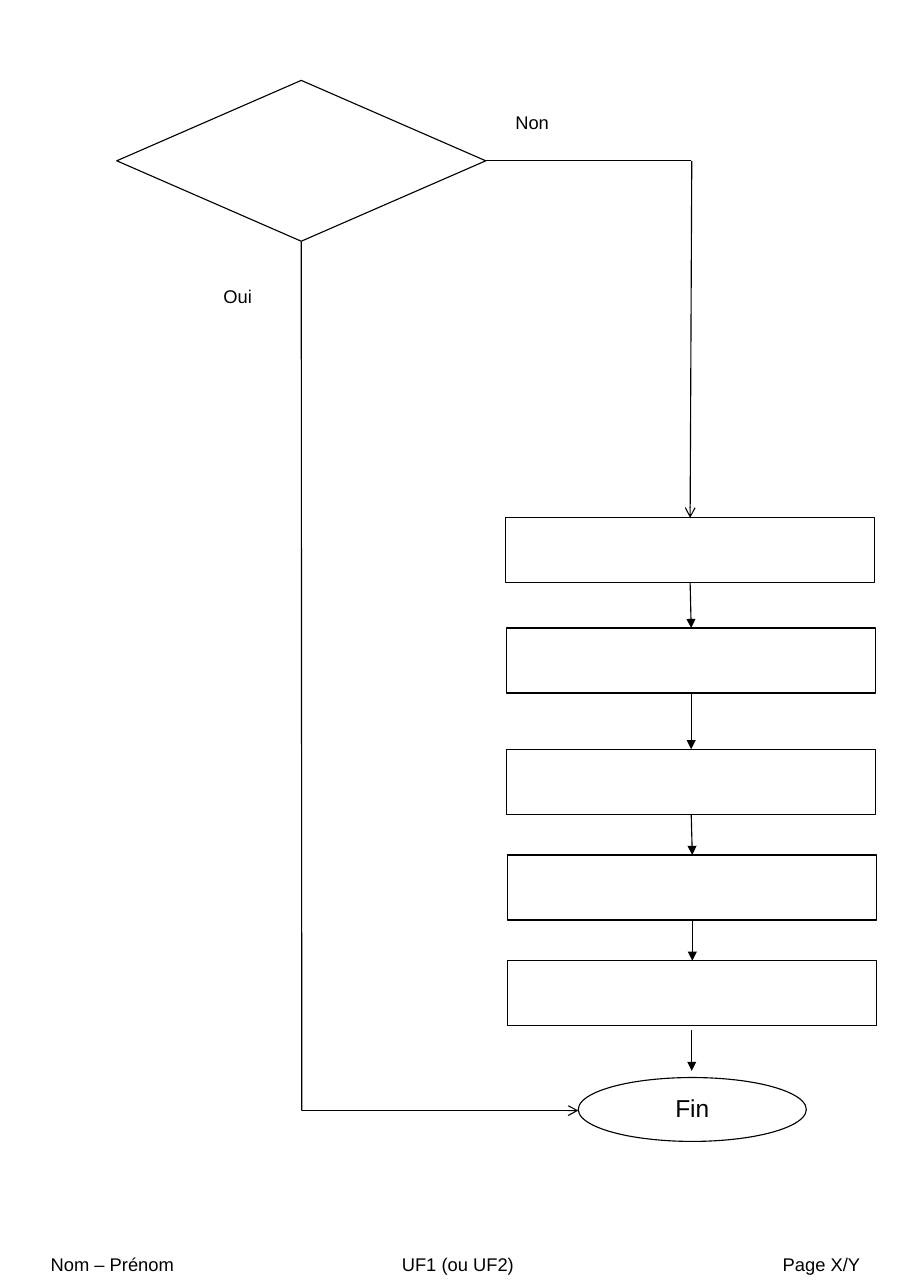
from lxml import etree
from pptx import Presentation
from pptx import util as u
from pptx.dml.color import RGBColor
from pptx.enum import shapes, text
from pptx.oxml.ns import qn

COLORS = {"ink": "000000", "paper": "FFFFFF"}
KIND = shapes.MSO_SHAPE


class Flowchart:
    """Style and current slide, with a method for each kind of element."""
    font = "Arial"
    line_width = 0.75

    def __init__(self, s):
        self.s = s

    def color(self, name):
        return RGBColor.from_string(COLORS[name])

    def outline(self, line):
        line.color.rgb = self.color("ink")
        line.width = u.Pt(self.line_width)

    def put_text(self, sp, words, size, inset=(0.1, 0.05), **fmt):
        tf = sp.text_frame
        x, y = (u.Inches(v) for v in inset)
        frame = {"word_wrap": True, "margin_left": x, "margin_right": x,
                 "margin_top": y, "margin_bottom": y,
                 "vertical_anchor": fmt.pop("anchor", text.MSO_ANCHOR.TOP)}
        for name, value in frame.items():
            setattr(tf, name, value)
        p = tf.paragraphs[0]
        for name, value in fmt.items():
            setattr(p, name, value)
        r = p.add_run()
        r.text = words
        for name, value in {"name": self.font, "size": u.Pt(size)}.items():
            setattr(r.font, name, value)
        r.font.color.rgb = self.color("ink")
        return p

    def label(self, words, box, **fmt):
        sp = self.s.shapes.add_textbox(*map(u.Inches, box))
        return self.put_text(sp, words, 12, **fmt)

    def node(self, kind, box):
        sp = self.s.shapes.add_shape(kind, *map(u.Inches, box))
        sp.shadow.inherit = False
        sp.fill.solid()
        sp.fill.fore_color.rgb = self.color("paper")
        self.outline(sp.line)
        return sp

    def link(self, start, end, head=None, begin=None, finish=None):
        """Line between two points; begin and finish are (shape, site)."""
        c = self.s.shapes.add_connector(
            shapes.MSO_CONNECTOR.STRAIGHT, *map(u.Inches, start + end))
        if begin:
            c.begin_connect(*begin)
        if finish:
            c.end_connect(*finish)
        self.outline(c.line)
        sp_pr = c._element.spPr
        if head:
            etree.SubElement(sp_pr.find(qn("a:ln")), qn("a:tailEnd"), type=head)
        etree.SubElement(sp_pr, qn("a:effectLst"))


def tab_stops(p, stops):
    tabs = etree.SubElement(p._p.get_or_add_pPr(), qn("a:tabLst"))
    for pos, align in stops:
        etree.SubElement(tabs, qn("a:tab"), pos=str(u.Inches(pos)), algn=align)


def main():
    prs = Presentation()
    prs.slide_width, prs.slide_height = u.Inches(8.27), u.Inches(11.69)
    chart = Flowchart(prs.slides.add_slide(prs.slide_layouts[6]))
    axis = 6.28
    yes_x, yes_y = 2.74, 10.08

    # Decision, steps and end
    decision = chart.node(KIND.FLOWCHART_DECISION, (1.06, 0.73, 3.35, 1.46))
    places = [(4.59, 4.7), (4.6, 5.7), (4.6, 6.8), (4.61, 7.76), (4.61, 8.72)]
    steps = [chart.node(KIND.RECTANGLE, (x, y, 3.35, 0.59)) for x, y in places]
    end = chart.node(KIND.OVAL, (5.25, 9.78, 2.07, 0.58))
    chart.put_text(end, "Fin", 16, (0.11, 0.06), alignment=text.PP_ALIGN.CENTER)

    # Arrows down the steps
    for upper, lower in zip(steps, steps[1:]):
        chart.link((axis, 5), (axis, 6), "triangle", (upper, 2), (lower, 0))
    chart.link((axis, 9.35), (axis, 9.72), "triangle")

    # "Oui" branch
    chart.link((yes_x, 2.19), (yes_x, yes_y), begin=(decision, 2))
    chart.link((yes_x, yes_y), (5.25, yes_y), "arrow")
    chart.label("Oui", (1.93, 2.54, 0.5, 0.25), space_after=u.Pt(10))

    # "Non" branch
    chart.link((4.41, 1.46), (6.27, 1.46), begin=(decision, 3))
    chart.link((axis, 1.46), (6.27, 4.7), "arrow", finish=(steps[0], 0))
    chart.label("Non", (4.58, 0.96, 0.67, 0.25), space_after=u.Pt(10))

    # Footer
    p = chart.label("Nom – Prénom \tUF1 (ou UF2) \tPage X/Y",
                    (0.35, 11.26, 7.72, 0.42), inset=(0.11, 0.06),
                    anchor=text.MSO_ANCHOR.MIDDLE)
    tab_stops(p, [(0, "l"), (3.72, "ctr"), (7.35, "r")])

    prs.save("out.pptx")


if __name__ == "__main__":
    main()
